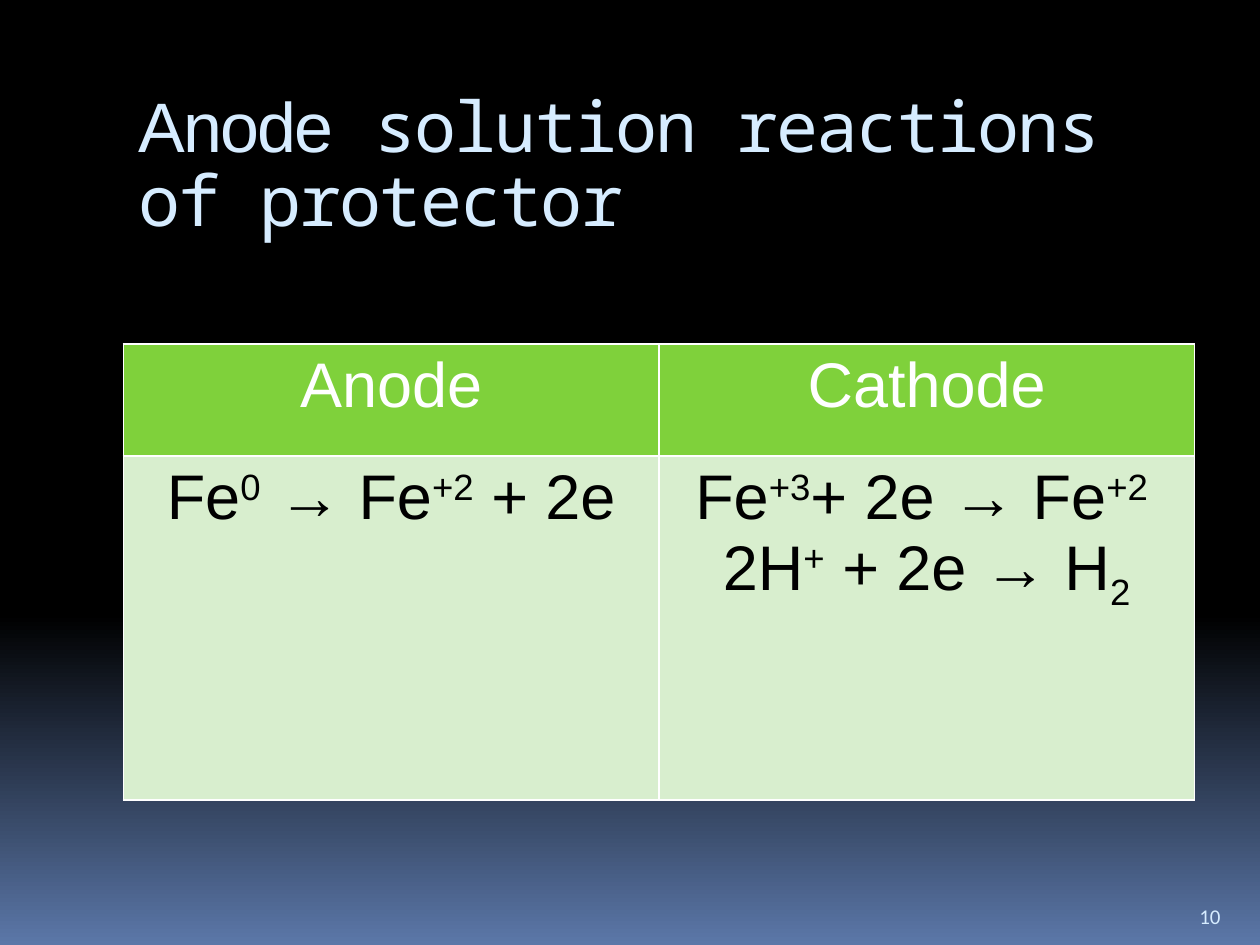
from lxml.etree import SubElement
from pptx import Presentation
from pptx.dml.color import RGBColor
from pptx.enum.text import MSO_ANCHOR as Anchor, PP_ALIGN as Align
from pptx.oxml.ns import qn
from pptx.util import Inches, Pt

COLORS = {
    "night": "000000",
    "dusk": "5B77A8",
    "ice": "D6ECFF",
    "header": "7FD13B",
    "body": "D8EECE",
    "white": "FFFFFF",
    "black": "000000",
}
SUPER, SUB = 30, -25
HEADERS = ["Аnode", "Cathode"]
REACTIONS = [
    [[("Fe", 0), ("0", SUPER), (" → Fe", 0), ("+2", SUPER), (" + 2e", 0)]],
    [
        [("Fe", 0), ("+3", SUPER), ("+ 2e → Fe", 0), ("+2 ", SUPER)],
        [("2H", 0), ("+", SUPER), (" + 2e → H", 0), ("2", SUB)],
    ],
]


def rgb(name):
    """Look up a palette colour."""
    return RGBColor.from_string(COLORS[name])


def add_run(paragraph, text, size, font, color, baseline=0):
    """Append one formatted run and return it."""
    run = paragraph.add_run()
    run.text = text
    run.font.size = Pt(size)
    run.font.name = font
    run.font.bold = False
    run.font.color.rgb = rgb(color)
    if baseline:
        run.font._element.set("baseline", str(baseline * 1000))
    return run


def place(shape, box):
    """Move a shape to a box given in inches."""
    shape.left, shape.top, shape.width, shape.height = map(Inches, box)


def paint_background(slide):
    """Fade the background from night to dusk over its lower third."""
    fill = slide.background.fill
    fill.gradient()
    fill.gradient_angle = 270
    for stop, color, position in zip(fill.gradient_stops, ("night", "dusk"), (0.65, 1)):
        stop.color.rgb = rgb(color)
        stop.position = position


def fill_title(slide, box):
    """Place and write the title."""
    title = slide.shapes.title
    place(title, box)
    frame = title.text_frame
    frame.word_wrap = True
    frame.vertical_anchor = Anchor.MIDDLE
    paragraph = frame.paragraphs[0]
    paragraph.alignment = Align.LEFT
    paragraph.line_spacing = 0.88
    for text, font in (("Anode", "Arial"), (" solution reactions of protector", "Noto Sans Mono")):
        run = add_run(paragraph, text, 40, font, "ice")
        run.font._element.set("spc", "-100")


def add_borders(cell):
    """Draw a thin white line on each side of a cell."""
    properties = cell._tc.get_or_add_tcPr()
    for index, side in enumerate(("lnL", "lnR", "lnT", "lnB")):
        line = properties.makeelement(qn(f"a:{side}"), {"w": str(Pt(1))})
        properties.insert(index, line)
        solid = SubElement(line, qn("a:solidFill"))
        SubElement(solid, qn("a:srgbClr"), val=COLORS["white"])


def fill_cell(cell, lines, fill, color):
    """Write centred lines of (text, baseline) pairs into a cell."""
    cell.fill.solid()
    cell.fill.fore_color.rgb = rgb(fill)
    add_borders(cell)
    frame = cell.text_frame
    for index, line in enumerate(lines):
        paragraph = frame.add_paragraph() if index else frame.paragraphs[0]
        paragraph.alignment = Align.CENTER
        for text, baseline in line:
            add_run(paragraph, text, 36, "Arial", color, baseline)


def add_reaction_table(slide, box, header_height):
    """Add the table of electrode reactions."""
    table = slide.shapes.add_table(2, len(HEADERS), *map(Inches, box)).table
    table.first_row = table.horz_banding = False
    table.rows[0].height = Inches(header_height)
    table.rows[1].height = Inches(box[3] - header_height)
    for column, (header, reactions) in enumerate(zip(HEADERS, REACTIONS)):
        fill_cell(table.cell(0, column), [[(header, 0)]], "header", "white")
        fill_cell(table.cell(1, column), reactions, "body", "black")


def add_page_number(slide, box):
    """Add the page number."""
    frame = slide.shapes.add_textbox(*map(Inches, box)).text_frame
    frame.word_wrap = True
    frame.vertical_anchor = Anchor.BOTTOM
    add_run(frame.paragraphs[0], "10", 12, "Calibri", "ice")


def main():
    """Build the slide and save it."""
    presentation = Presentation()
    presentation.slide_width, presentation.slide_height = Inches(10), Inches(7.5)
    slide = presentation.slides.add_slide(presentation.slide_layouts[5])
    paint_background(slide)
    fill_title(slide, (1, 0.56, 8.5, 1.54))
    add_reaction_table(slide, (0.98, 2.73, 8.5, 3.62), 0.89)
    add_page_number(slide, (9.42, 7.02, 0.5, 0.4))
    presentation.save("out.pptx")


if __name__ == "__main__":
    main()
